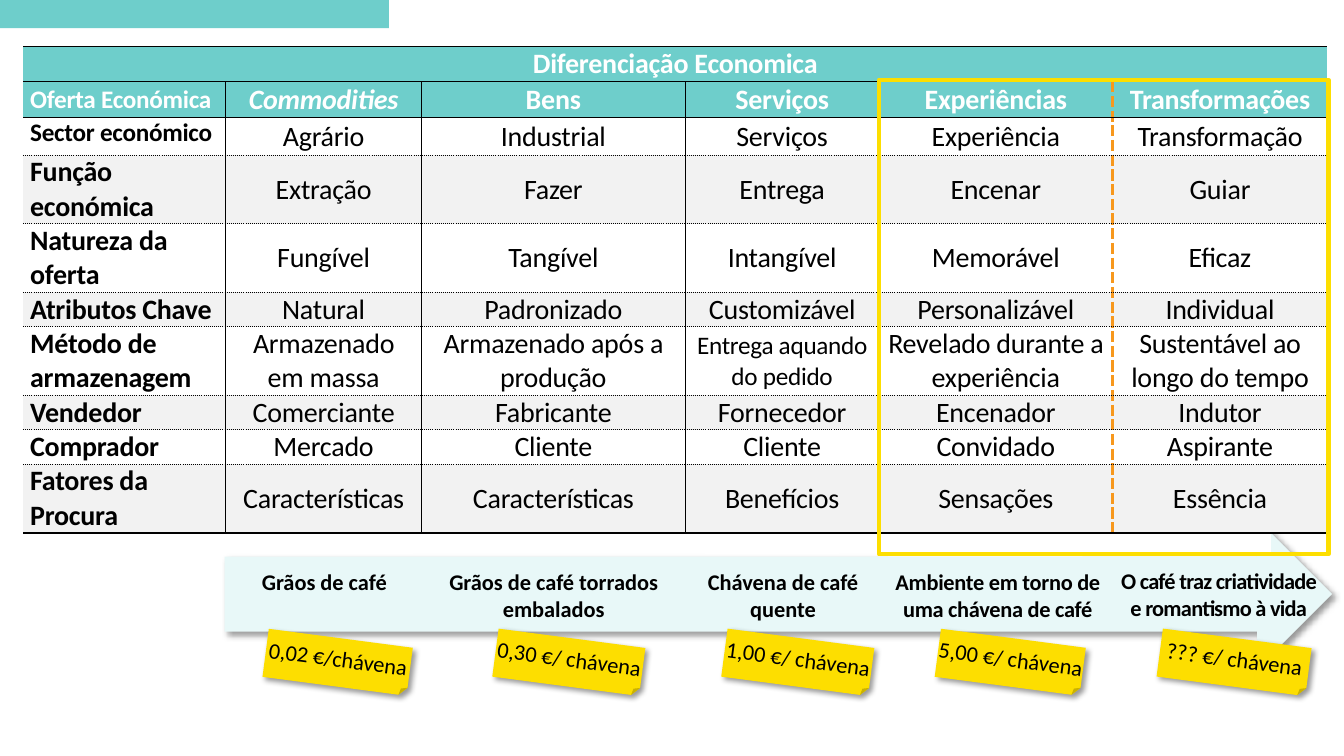
from dataclasses import dataclass

import pptx
import pptx.dml.color
import pptx.enum.shapes
import pptx.enum.text
import pptx.oxml
import pptx.oxml.ns
import pptx.util

Cm, Pt = pptx.util.Cm, pptx.util.Pt
RGBColor = pptx.dml.color.RGBColor
Shape = pptx.enum.shapes.MSO_SHAPE
Align = pptx.enum.text.PP_ALIGN
Anchor = pptx.enum.text.MSO_ANCHOR

TEAL = RGBColor(0x6E, 0xCE, 0xCB)
PALE_TEAL = RGBColor(0xE8, 0xF8, 0xF8)
YELLOW = RGBColor(0xFD, 0xDE, 0x00)
ORANGE = RGBColor(0xF7, 0x98, 0x1D)
GREY = RGBColor(0xF2, 0xF2, 0xF2)
WHITE = RGBColor(0xFF, 0xFF, 0xFF)
BLACK = RGBColor(0x00, 0x00, 0x00)
NO_STYLE = "{2D5ABB26-0587-4C30-8999-92F81FD0307C}"


@dataclass(frozen=True)
class Place:
    """Position and size in centimetres."""
    left: float
    top: float
    width: float
    height: float

    def lengths(self) -> list:
        return [Cm(v) for v in (self.left, self.top, self.width, self.height)]


@dataclass(frozen=True)
class Style:
    size: float = 20
    color: RGBColor = BLACK
    bold: bool = False
    italic: bool = False
    spacing: float = 0


@dataclass(frozen=True)
class Border:
    color: RGBColor = BLACK
    width: float = 1
    dash: str = "solid"


@dataclass(frozen=True)
class Stage:
    """Coffee example and price tag below one table column."""
    caption: str
    caption_place: Place
    price: str
    price_left: float
    price_width: float
    spacing: float = 0


SOLID, DOTTED = Border(), Border(dash="sysDot")
BOTTOM, DIVIDER = Border(width=1.5), Border(ORANGE, 2.25, "dash")

TITLE = "Diferenciação Economica"
ROWS = [
    ["Oferta Económica", "Commodities", "Bens", "Serviços", "Experiências", "Transformações"],
    ["Sector económico", "Agrário", "Industrial", "Serviços", "Experiência", "Transformação"],
    ["Função económica", "Extração", "Fazer", "Entrega", "Encenar", "Guiar"],
    ["Natureza da oferta", "Fungível", "Tangível", "Intangível", "Memorável", "Eficaz"],
    ["Atributos Chave", "Natural", "Padronizado", "Customizável", "Personalizável", "Individual"],
    ["Método de armazenagem", "Armazenado em massa", "Armazenado após a produção",
     "Entrega aquando do pedido", "Revelado durante a experiência",
     "Sustentável ao longo do tempo"],
    ["Vendedor", "Comerciante", "Fabricante", "Fornecedor", "Encenador", "Indutor"],
    ["Comprador", "Mercado", "Cliente", "Cliente", "Convidado", "Aspirante"],
    ["Fatores da Procura", "Características", "Características", "Benefícios", "Sensações",
     "Essência"],
]
SMALLER = {"Oferta Económica", "Sector económico", "Entrega aquando do pedido"}
COLUMN_WIDTHS = [5.11, 4.93, 6.65, 4.88, 5.89, 5.41]
ROW_HEIGHTS = [0.89, 0.91, 0.94, 1.73, 1.73, 0.86, 1.73, 0.86, 0.86, 1.73]

STAGES = [
    Stage("Grãos de café", Place(5.66, 14.2, 5.03, 0.94), "0,02 €/chávena", 6.68, 3.66),
    Stage("Grãos de café torrados embalados", Place(10.59, 14.2, 6.73, 1.63),
          "0,30 €/ chávena", 12.47, 3.73),
    Stage("Chávena de café quente", Place(17.32, 14.2, 4.83, 1.63),
          "1,00 €/ chávena", 18.24, 3.73),
    Stage("Ambiente em torno de uma chávena de café", Place(22.15, 14.2, 5.99, 1.63),
          "5,00 €/ chávena", 23.62, 3.68, -0.2),
    Stage("O café traz criatividade e romantismo à vida", Place(27.91, 14.17, 5.61, 1.63),
          "??? €/ chávena", 29.21, 3.78, -0.5),
]
MASKS = [Place(28.63, 11.23, 3.4, 2.77), Place(22.38, 11.25, 4.9, 2.77),
         Place(17.75, 11.2, 3.4, 2.77), Place(6.32, 11.18, 4.09, 2.79)]


def write(frame, text: str, style: Style, align=Align.CENTER) -> None:
    paragraph = frame.paragraphs[0]
    paragraph.alignment = align
    run = paragraph.add_run()
    run.text = text
    font = run.font
    font.name, font.size = "Calibri", Pt(style.size)
    font.bold, font.italic = style.bold, style.italic
    font.color.rgb = style.color
    if style.spacing:
        font._element.set("spc", str(round(style.spacing * 100)))


def add_block(slide, kind, place: Place, fill: RGBColor | None, shadow: bool = False):
    block = slide.shapes.add_shape(kind, *place.lengths())
    block.shadow.inherit = False
    block.line.fill.background()
    if fill is None:
        block.fill.background()
    else:
        block.fill.solid()
        block.fill.fore_color.rgb = fill
    if shadow:
        effects = block._element.spPr.find(pptx.oxml.ns.qn("a:effectLst"))
        effects.append(pptx.oxml.parse_xml(
            f'<a:outerShdw {pptx.oxml.ns.nsdecls("a")} blurRad="{Pt(4)}" dist="{Pt(3)}" '
            'dir="2700000" algn="tl" rotWithShape="0"><a:srgbClr val="000000">'
            '<a:alpha val="40000"/></a:srgbClr></a:outerShdw>'))
    return block


def set_borders(cell, borders: dict[str, Border | None]) -> None:
    """Set borders by side, in the order L, R, T, B."""
    for side, border in borders.items():
        if border is None:
            continue
        cell._tc.get_or_add_tcPr().append(pptx.oxml.parse_xml(
            f'<a:ln{side} {pptx.oxml.ns.nsdecls("a")} w="{Pt(border.width)}">'
            f'<a:solidFill><a:srgbClr val="{border.color}"/></a:solidFill>'
            f'<a:prstDash val="{border.dash}"/></a:ln{side}>'))


def vertical_border(row: int, edge: int) -> Border | None:
    if row == 0 or edge in (0, len(COLUMN_WIDTHS)):
        return None
    return DIVIDER if edge == len(COLUMN_WIDTHS) - 1 else SOLID


def horizontal_border(edge: int) -> Border:
    if edge == len(ROW_HEIGHTS):
        return BOTTOM
    return SOLID if edge <= 2 else DOTTED


def format_cell(cell, row: int, column: int) -> None:
    cell.margin_left = cell.margin_right = Cm(0.18)
    cell.margin_top = cell.margin_bottom = 0
    is_label = row >= 2 and column == 0
    cell.vertical_anchor = Anchor.TOP if is_label else Anchor.MIDDLE
    set_borders(cell, {"L": vertical_border(row, column), "R": vertical_border(row, column + 1),
                       "T": horizontal_border(row), "B": horizontal_border(row + 1)})
    if row >= 2 and row % 2 == 0:
        cell.fill.background()
    else:
        cell.fill.solid()
        cell.fill.fore_color.rgb = TEAL if row < 2 else GREY


def add_offer_table(slide) -> None:
    place = Place(0.58, 1.17, sum(COLUMN_WIDTHS), sum(ROW_HEIGHTS))
    table = slide.shapes.add_table(len(ROW_HEIGHTS), len(COLUMN_WIDTHS), *place.lengths()).table
    table.first_row = table.horz_banding = False
    table._tbl.tblPr.find(pptx.oxml.ns.qn("a:tableStyleId")).text = NO_STYLE
    for column, width in enumerate(COLUMN_WIDTHS):
        table.columns[column].width = Cm(width)
    for row, height in enumerate(ROW_HEIGHTS):
        table.rows[row].height = Cm(height)
        for column in range(len(COLUMN_WIDTHS)):
            format_cell(table.cell(row, column), row, column)
    table.cell(0, 0).merge(table.cell(0, len(COLUMN_WIDTHS) - 1))
    write(table.cell(0, 0).text_frame, TITLE, Style(color=WHITE, bold=True, spacing=-0.2))
    for row, texts in enumerate(ROWS, start=1):
        for column, text in enumerate(texts):
            style = Style(size=18 if text in SMALLER else 20,
                          color=WHITE if row == 1 else BLACK, bold=row == 1 or column == 0,
                          italic=text == "Commodities", spacing=-0.2)
            first = Align.JUSTIFY if row == 1 else Align.LEFT
            write(table.cell(row, column).text_frame, text, style,
                  first if column == 0 else Align.CENTER)


def add_stage(slide, stage: Stage) -> None:
    caption = slide.shapes.add_textbox(*stage.caption_place.lengths()).text_frame
    caption.word_wrap = True
    caption.auto_size = pptx.enum.text.MSO_AUTO_SIZE.SHAPE_TO_FIT_TEXT
    write(caption, stage.caption, Style(16, bold=True, spacing=stage.spacing))
    tag = add_block(slide, Shape.FOLDED_CORNER,
                    Place(stage.price_left, 16.08, stage.price_width, 1.22), YELLOW, shadow=True)
    tag.rotation = 7.5
    tag.text_frame.word_wrap = False
    tag.text_frame.vertical_anchor = Anchor.MIDDLE
    write(tag.text_frame, stage.price, Style(16))


def main() -> None:
    deck = pptx.Presentation()
    deck.slide_width, deck.slide_height = Cm(33.87), Cm(19.05)
    slide = deck.slides.add_slide(deck.slide_layouts[6])
    add_block(slide, Shape.RECTANGLE, Place(0, 0, 9.8, 0.71), TEAL)
    add_block(slide, Shape.RIGHT_ARROW, Place(5.66, 13.08, 27.91, 3.78), PALE_TEAL, shadow=True)
    for mask in MASKS:
        add_block(slide, Shape.RECTANGLE, mask, WHITE)
    add_offer_table(slide)
    for stage in STAGES:
        add_stage(slide, stage)
    highlight = add_block(slide, Shape.RECTANGLE, Place(22.15, 2.01, 11.33, 11.96), None)
    highlight.line.color.rgb = YELLOW
    highlight.line.width = Pt(3)
    deck.save("out.pptx")


if __name__ == "__main__":
    main()
